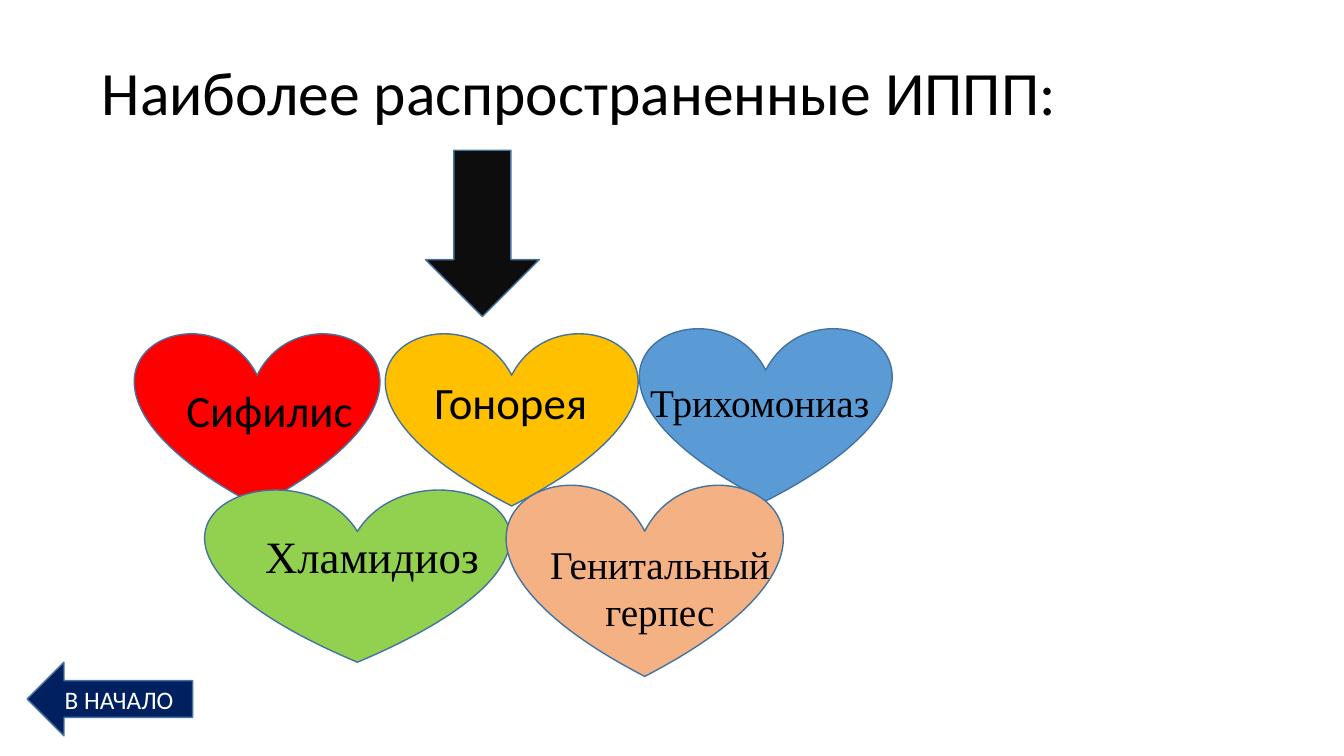
from dataclasses import dataclass

from pptx import Presentation
from pptx.dml.color import RGBColor
from pptx.enum.shapes import MSO_SHAPE
from pptx.enum.text import MSO_ANCHOR, MSO_AUTO_SIZE, PP_ALIGN
from pptx.util import Emu, Pt

HEART, DOWN, BACK = MSO_SHAPE.HEART, MSO_SHAPE.DOWN_ARROW, MSO_SHAPE.LEFT_ARROW
LEFT, CENTER = PP_ALIGN.LEFT, PP_ALIGN.CENTER
TOP, MIDDLE, BOTTOM = MSO_ANCHOR.TOP, MSO_ANCHOR.MIDDLE, MSO_ANCHOR.BOTTOM
FIXED, GROW = MSO_AUTO_SIZE.NONE, MSO_AUTO_SIZE.SHAPE_TO_FIT_TEXT
EMU_PER_PX = 9144


@dataclass(frozen=True)
class Theme:
    sans: str = "Calibri"
    serif: str = "Times New Roman"
    title: int = 44
    large: int = 32
    medium: int = 28
    button: int = 18
    outline: int = 1
    text: str = "000000"
    light: str = "FFFFFF"
    edge: str = "43739E"
    arrow: str = "0D0D0D"
    navy: str = "002060"
    red: str = "FF0000"
    gold: str = "FFC000"
    blue: str = "5B9BD5"
    green: str = "92D050"
    peach: str = "F4B183"


class SlideBuilder:
    def __init__(self, prs, theme):
        self.theme = theme
        self.slide = prs.slides.add_slide(prs.slide_layouts[5])

    def box(self, *px):
        return [Emu(v * EMU_PER_PX) for v in px]

    def set_text(self, sp, text, size, font, color, align=LEFT, anchor=TOP, fit=FIXED):
        tf = sp.text_frame
        tf.text = text
        frame = {"word_wrap": True, "auto_size": fit, "vertical_anchor": anchor}
        for name, value in frame.items():
            setattr(tf, name, value)
        p = tf.paragraphs[0]
        p.alignment = align
        r = p.runs[0]
        for name, value in {"size": Pt(size), "name": font, "bold": False}.items():
            setattr(r.font, name, value)
        r.font.color.rgb = RGBColor.from_string(color)
        return p

    def title(self, text, *px):
        sp = self.slide.shapes.title
        for name, value in zip(("left", "top", "width", "height"), self.box(*px)):
            setattr(sp, name, value)
        t = self.theme
        p = self.set_text(sp, text, t.title, t.sans, t.text, anchor=BOTTOM)
        p.line_spacing = 0.9

    def shape(self, kind, fill, *px):
        sp = self.slide.shapes.add_shape(kind, *self.box(*px))
        sp.shadow.inherit = False
        sp.fill.solid()
        sp.fill.fore_color.rgb = RGBColor.from_string(fill)
        sp.line.color.rgb = RGBColor.from_string(self.theme.edge)
        sp.line.width = Pt(self.theme.outline)
        return sp

    def label(self, text, size, font, align, *px):
        sp = self.slide.shapes.add_textbox(*self.box(*px))
        self.set_text(sp, text, size, font, self.theme.text, align, fit=GROW)

    def button(self, text, *px):
        t = self.theme
        sp = self.shape(BACK, t.navy, *px)
        self.set_text(sp, text, t.button, t.sans, t.light, CENTER, MIDDLE)


def main():
    prs = Presentation()
    prs.slide_width, prs.slide_height = Emu(1333 * EMU_PER_PX), Emu(750 * EMU_PER_PX)
    t = Theme()
    s = SlideBuilder(prs, t)

    s.title("Наиболее распространенные ИППП:", 91, 62, 1150, 71)
    s.shape(DOWN, t.arrow, 422, 149, 113, 165)

    hearts = [
        (t.red, 134, 329, 242, 173),
        (t.gold, 383, 329, 249, 173),
        (t.blue, 635, 324, 249, 173),
        (t.green, 204, 484, 301, 173),
        (t.peach, 503, 479, 273, 192),
    ]
    for heart in hearts:
        s.shape(HEART, *heart)

    labels = [
        ("Сифилис", t.large, t.sans, LEFT, 175, 375, 216, 64),
        ("Гонорея", t.large, t.sans, LEFT, 421, 367, 174, 64),
        ("Трихомониаз", t.medium, t.serif, LEFT, 635, 370, 249, 57),
        ("Хламидиоз", t.large, t.serif, LEFT, 253, 520, 245, 64),
        ("Генитальный герпес", t.medium, t.serif, CENTER, 535, 531, 239, 104),
    ]
    for label in labels:
        s.label(*label)

    s.button("В НАЧАЛО", 27, 657, 164, 73)
    prs.save("out.pptx")


if __name__ == "__main__":
    main()
